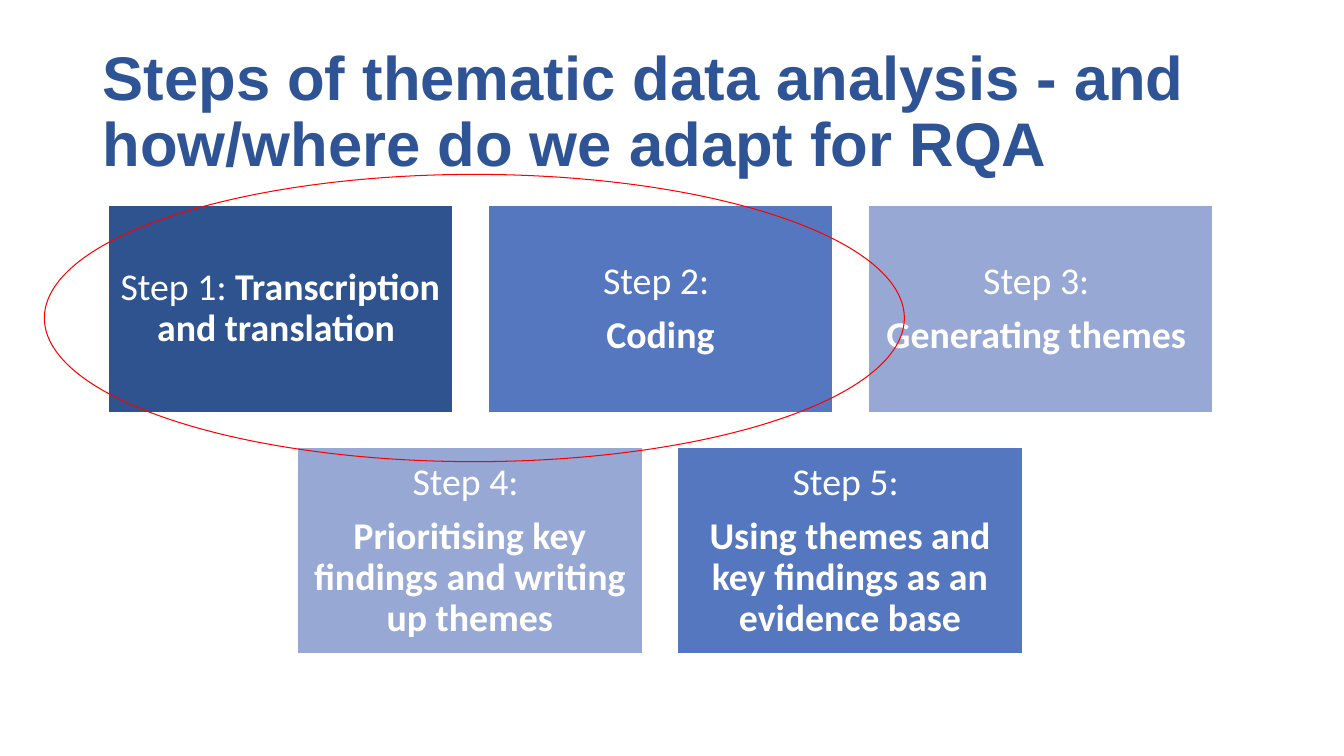
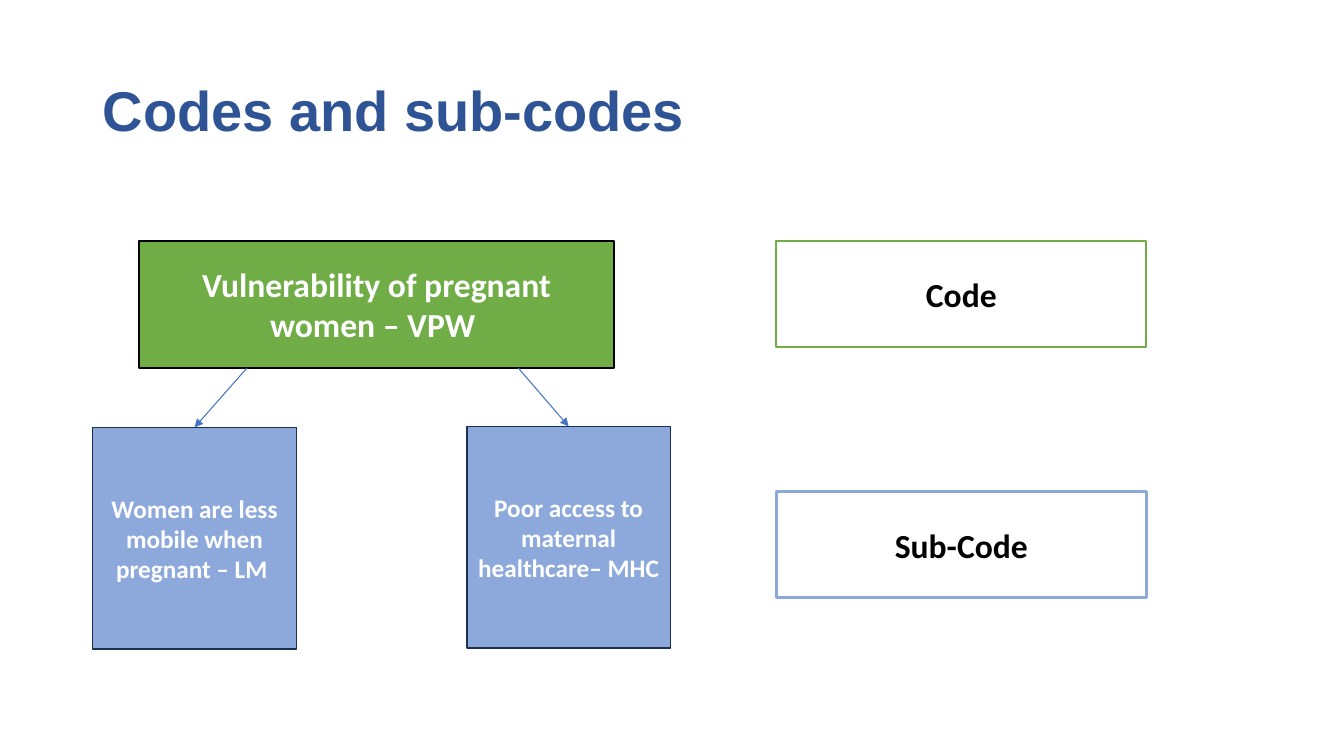
"""Build two slides on thematic analysis steps and on codes with sub-codes."""
from dataclasses import dataclass

from lxml.etree import SubElement
from pptx import Presentation
from pptx.dml.color import RGBColor
from pptx.enum.shapes import MSO_CONNECTOR, MSO_SHAPE
from pptx.enum.text import MSO_ANCHOR, PP_ALIGN
from pptx.oxml.ns import qn
from pptx.util import Emu, Pt

EMU_PER_PX = 9144


def px(length):
    """Turn a length in px (100 to the inch) into EMU."""
    return Emu(length * EMU_PER_PX)


def add_run(paragraph, text, font="Calibri", size=24, color="FFFFFF", bold=False):
    """Append a formatted run to a paragraph."""
    run = paragraph.add_run()
    run.text = text
    run.font.name = font
    run.font.size = Pt(size)
    run.font.bold = bold
    run.font.color.rgb = RGBColor.from_string(color)


@dataclass(frozen=True)
class Theme:
    """Colours, fonts and type sizes."""
    title: str = "2F5496"
    white: str = "FFFFFF"
    black: str = "000000"
    dark_blue: str = "2E538F"
    blue: str = "5477C0"
    pale_blue: str = "97A8D5"
    green: str = "70AD47"
    sub_code: str = "8DA9DB"
    sub_code_edge: str = "1C3052"
    arrow: str = "4472C4"
    highlight: str = "FF0000"
    title_font: str = "Arial"
    title_size: int = 44
    short_title_size: int = 40
    step_size: int = 27
    code_size: int = 24
    sub_code_size: int = 18


class Deck:
    """Hold the theme and the current slide, and draw its elements."""

    def __init__(self, theme):
        """Start an empty wide presentation."""
        self.theme = theme
        self.presentation = Presentation()
        self.presentation.slide_width = px(1333)
        self.presentation.slide_height = px(750)
        self.slide = None

    def add_slide(self, title, size):
        """Add a blank slide with a title."""
        self.slide = self.presentation.slides.add_slide(self.presentation.slide_layouts[6])
        box = self.slide.shapes.add_textbox(px(92), px(40), px(1150), px(145))
        self.set_frame(box.text_frame)
        paragraph = box.text_frame.paragraphs[0]
        paragraph.line_spacing = 0.9
        add_run(paragraph, title, font=self.theme.title_font, size=size,
                color=self.theme.title, bold=True)

    def set_frame(self, frame, side=10, top=5):
        """Wrap and centre a text frame vertically within its margins."""
        frame.word_wrap = True
        frame.vertical_anchor = MSO_ANCHOR.MIDDLE
        frame.margin_left = frame.margin_right = px(side)
        frame.margin_top = frame.margin_bottom = px(top)

    def add_shape(self, kind, left, top, width, height, line, weight, fill=None):
        """Add an outlined shape, filled when a colour is given."""
        shape = self.slide.shapes.add_shape(kind, px(left), px(top), px(width), px(height))
        shape.shadow.inherit = False
        if fill:
            shape.fill.solid()
            shape.fill.fore_color.rgb = RGBColor.from_string(fill)
        else:
            shape.fill.background()
        shape.line.color.rgb = RGBColor.from_string(line)
        shape.line.width = Pt(weight)
        return shape

    def add_step(self, left, top, width, height, fill, paragraphs):
        """Add a step box from paragraphs of (text, bold) runs."""
        shape = self.add_shape(MSO_SHAPE.RECTANGLE, left, top, width, height,
                               self.theme.white, 1, fill)
        frame = shape.text_frame
        self.set_frame(frame, top=11)
        for index, runs in enumerate(paragraphs):
            paragraph = frame.add_paragraph() if index else frame.paragraphs[0]
            paragraph.alignment = PP_ALIGN.CENTER
            paragraph.line_spacing = 0.9
            paragraph.space_before = Pt(9.4 if index else 0)
            for text, bold in runs:
                add_run(paragraph, text, size=self.theme.step_size, bold=bold)

    def add_code(self, text, left, top, width, height, line, weight=1, fill=None, **text_format):
        """Add a box with one bold centred label."""
        shape = self.add_shape(MSO_SHAPE.RECTANGLE, left, top, width, height, line, weight, fill)
        self.set_frame(shape.text_frame)
        paragraph = shape.text_frame.paragraphs[0]
        paragraph.alignment = PP_ALIGN.CENTER
        add_run(paragraph, text, bold=True, **text_format)
        return shape

    def add_arrow(self, left, top, target):
        """Draw an arrow from a point to the top middle of a box."""
        arrow = self.slide.shapes.add_connector(
            MSO_CONNECTOR.STRAIGHT, px(left), px(top), target.left, target.top)
        arrow.end_connect(target, 0)
        arrow.line.color.rgb = RGBColor.from_string(self.theme.arrow)
        arrow.line.width = Pt(0.75)
        SubElement(arrow.line._get_or_add_ln(), qn("a:tailEnd"), type="triangle")
        SubElement(arrow._element.spPr, qn("a:effectLst"))


def build_steps(deck):
    """Build the slide with five steps in two centred rows."""
    theme = deck.theme
    deck.add_slide("Steps of thematic data analysis - and how/where do we adapt for RQA",
                   theme.title_size)
    width, height, gap, center = 342, 205, 35, 655
    first_step = [[("Step 1: ", False), ("Transcription and translation ", True)]]

    def step(number, name):
        """Return a step number above its bold name."""
        return [[(f"Step {number}: ", False)], [(name, True)]]

    rows = [
        [(theme.dark_blue, first_step),
         (theme.blue, step(2, "Coding")),
         (theme.pale_blue, step(3, "Generating themes "))],
        [(theme.pale_blue, step(4, "Prioritising key findings and writing up themes")),
         (theme.blue, step(5, "Using themes and key findings as an evidence base"))],
    ]
    for row_index, row in enumerate(rows):
        row_width = len(row) * (width + gap) - gap
        left = center - (row_width + 1) // 2
        for column, (fill, paragraphs) in enumerate(row):
            deck.add_step(left + column * (width + gap), 204 + row_index * (height + gap),
                          width, height, fill, paragraphs)
    deck.add_shape(MSO_SHAPE.OVAL, 44, 173, 853, 285, theme.highlight, 0.75)


def build_codes(deck):
    """Build the slide with a code, its sub-codes and a legend."""
    theme = deck.theme
    deck.add_slide("Codes and sub-codes", theme.short_title_size)
    deck.add_code("Vulnerability of pregnant women – VPW ", 138, 239, 471, 126,
                  theme.black, fill=theme.green, size=theme.code_size)
    for text, top, line, weight in [("Code", 239, theme.green, 1.5),
                                    ("Sub-Code", 488, theme.sub_code, 2.25)]:
        deck.add_code(text, 770, top, 367, 105, line, weight,
                      size=theme.code_size, color=theme.black)
    for text, left, top, arrow_left in [
            ("Women are less mobile when pregnant – LM ", 92, 424, 245),
            ("Poor access to maternal healthcare– MHC ", 463, 423, 514)]:
        box = deck.add_code(text, left, top, 202, 220, theme.sub_code_edge,
                            fill=theme.sub_code, size=theme.sub_code_size)
        deck.add_arrow(arrow_left, 365, box)


def main():
    """Build and save the presentation."""
    deck = Deck(Theme())
    build_steps(deck)
    build_codes(deck)
    deck.presentation.save("out.pptx")


if __name__ == "__main__":
    main()
